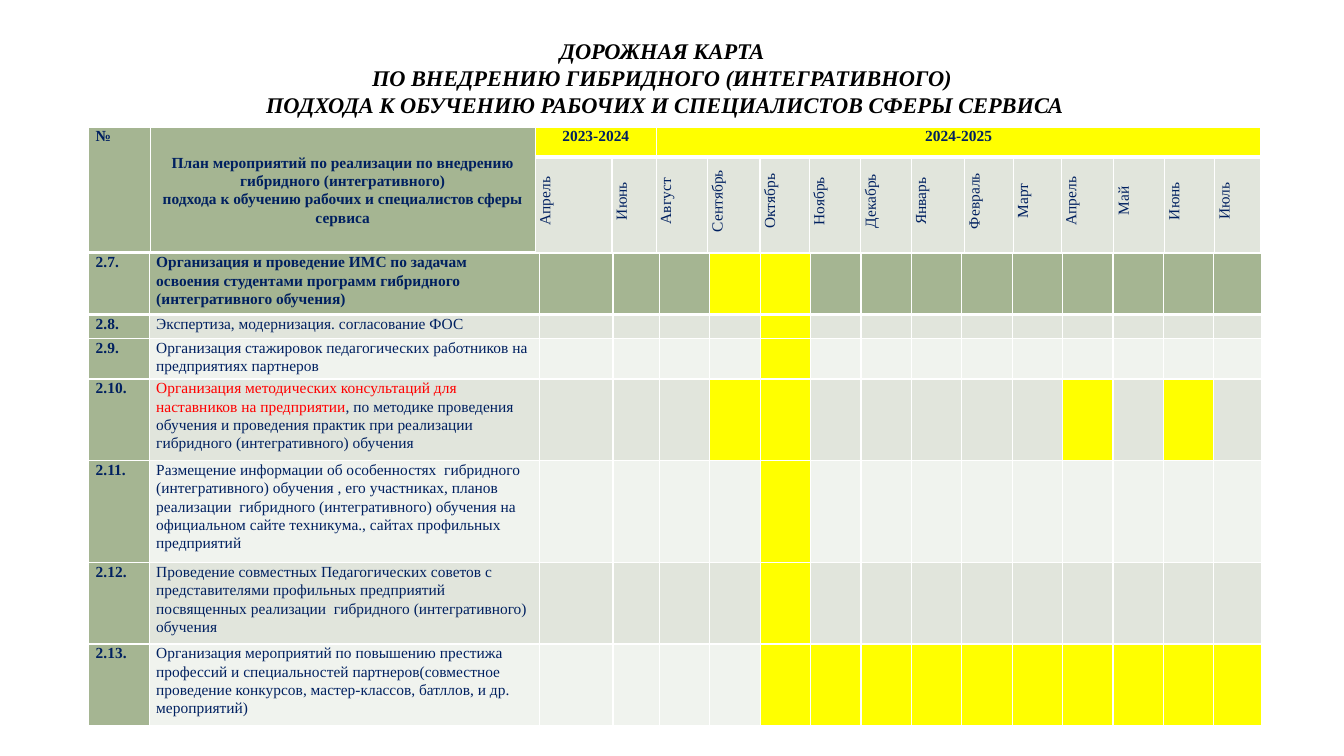
from lxml.etree import SubElement as Sub
from pptx import Presentation
from pptx.dml.color import RGBColor as Rgb
from pptx.enum.text import MSO_ANCHOR as Anchor, PP_ALIGN as Align
from pptx.oxml.ns import qn
from pptx.util import Inches, Pt

HUES = {"ink": "002060", "black": "000000", "red": "FF0000", "white": "FFFFFF",
        "green": "A5B592", "mid": "E1E5DC", "pale": "F0F3EE", "mark": "FFFF00"}

TITLE = ("ДОРОЖНАЯ КАРТА \n"
         "ПО ВНЕДРЕНИЮ ГИБРИДНОГО (ИНТЕГРАТИВНОГО) \n"
         "ПОДХОДА К ОБУЧЕНИЮ РАБОЧИХ И СПЕЦИАЛИСТОВ СФЕРЫ СЕРВИСА")
PLAN = ("План мероприятий по реализации по внедрению гибридного (интегративного)\n"
        "подхода к обучению рабочих и специалистов сферы сервиса")
MONTHS = ("Апрель Июнь Август Сентябрь Октябрь Ноябрь Декабрь Январь Февраль "
          "Март Апрель Май Июнь Июль").split()
LEAD = "Организация методических консультаций для наставников на предприятии"

TASKS = [
    (0.61, "Организация и проведение ИМС по задачам освоения студентами программ "
     "гибридного (интегративного обучения)", [3, 4]),
    (0.24, "Экспертиза, модернизация. согласование ФОС", [4]),
    (0.4, "Организация стажировок педагогических работников на предприятиях партнеров",
     [4]),
    (0.81, LEAD + ", по методике проведения обучения и проведения практик при "
     "реализации гибридного (интегративного) обучения", [3, 4, 10, 12]),
    (1.01, "Размещение информации об особенностях  гибридного (интегративного) "
     "обучения , его участниках, планов реализации  гибридного (интегративного) "
     "обучения на официальном сайте техникума., сайтах профильных предприятий", [4]),
    (0.81, "Проведение совместных Педагогических советов с представителями "
     "профильных предприятий посвященных реализации  гибридного (интегративного) "
     "обучения", [4]),
    (0.81, "Организация мероприятий по повышению престижа профессий и "
     "специальностей партнеров(совместное проведение конкурсов, мастер-классов, "
     "батллов, и др. мероприятий)", range(4, 14)),
]


def put(frame, text, size=11, hue="ink", bold=False, italic=False,
        align=Align.LEFT, space=1.07, lead=""):
    """Write lines of text into a frame, with an optional red lead."""
    for i, line in enumerate(text.split("\n")):
        para = frame.add_paragraph() if i else frame.paragraphs[0]
        para.alignment = align
        para.line_spacing = space
        parts = [(line, hue)]
        if lead and line.startswith(lead):
            parts = [(lead, "red"), (line[len(lead):], hue)]
        for part, tone in parts:
            run = para.add_run()
            run.text = part
            font = run.font
            font.name, font.size = "Times New Roman", Pt(size)
            font.bold, font.italic = bold, italic
            font.color.rgb = Rgb.from_string(HUES[tone])


def paint(cell, hue, base=1):
    """Give a cell its margins, white borders and fill."""
    cell.margin_left = cell.margin_right = Inches(0.07)
    cell.margin_top = cell.margin_bottom = 0
    props = cell._tc.get_or_add_tcPr()
    for side in "LRTB":
        line = Sub(props, qn("a:ln" + side), w=str(Pt(base if side == "B" else 1)))
        Sub(Sub(line, qn("a:solidFill")), qn("a:srgbClr"), val=HUES["white"])
    cell.fill.solid()
    cell.fill.fore_color.rgb = Rgb.from_string(HUES[hue])


def make_grid(slide, box, cols, rows):
    """Add a bare table with the given column widths and row heights."""
    frame = slide.shapes.add_table(len(rows), len(cols), *map(Inches, box))
    grid = frame.table
    for col, width in zip(grid.columns, cols):
        col.width = Inches(width)
    for row, height in zip(grid.rows, rows):
        row.height = Inches(height)
    return grid


def add_title(slide, box):
    """Place the three-line title."""
    title = slide.shapes.title
    title.left, title.top, title.width, title.height = map(Inches, box)
    title.text_frame.vertical_anchor = Anchor.TOP
    put(title.text_frame, TITLE, size=16, hue="black", bold=True, italic=True,
        align=Align.CENTER, space=1.0)


def add_head(slide, box):
    """Place the header with school years and months."""
    cols = [0.61, 3.82, 0.76, 0.44, 0.51, 0.52, 0.49, 0.51, 0.5, 0.53,
            0.48, 0.48, 0.52, 0.5, 0.5, 0.46]
    grid = make_grid(slide, box, cols, [0.3, 0.95])
    for c in range(len(cols)):
        paint(grid.cell(0, c), "green" if c < 2 else "mark", 3)
        paint(grid.cell(1, c), "green" if c < 2 else "mid", 3 if c < 2 else 1)
    heads = [(0, 1, 0, "№", Align.LEFT), (1, 1, 1, PLAN, Align.CENTER),
             (2, 0, 3, "2023-2024", Align.CENTER),
             (4, 0, 15, "2024-2025", Align.CENTER)]
    for left, low, right, text, align in heads:
        cell = grid.cell(0, left)
        cell.merge(grid.cell(low, right))
        put(cell.text_frame, text, bold=True, align=align)
    grid.cell(0, 1).vertical_anchor = Anchor.MIDDLE
    for c, month in enumerate(MONTHS, 2):
        cell = grid.cell(1, c)
        cell._tc.get_or_add_tcPr().set("vert", "vert270")
        put(cell.text_frame, month, align=Align.CENTER)
        cell.text_frame.paragraphs[0]._p.get_or_add_pPr().set("marL", str(Inches(0.08)))


def add_tasks(slide, box):
    """Place the numbered tasks with their marked months."""
    cols = [0.6, 3.87, 0.73, 0.46] + [0.5] * 11 + [0.47]
    grid = make_grid(slide, box, cols, [task[0] for task in TASKS])
    for r, (_, text, marks) in enumerate(TASKS):
        tone = "green" if r == 0 else "mid" if r % 2 else "pale"
        for c in range(len(cols)):
            cell = grid.cell(r, c)
            hue = "green" if c == 0 else "mark" if c - 2 in marks else tone
            paint(cell, hue, 1 if r else 3)
            if c > 1:
                para = cell.text_frame.paragraphs[0]
                Sub(para._p, qn("a:endParaRPr"), sz="1100")
        put(grid.cell(r, 0).text_frame, f"2.{r + 7}.", bold=True)
        put(grid.cell(r, 1).text_frame, text, bold=r == 0, lead=LEAD)


def main():
    """Build the road map slide."""
    deck = Presentation()
    deck.slide_width, deck.slide_height = Inches(13.33), Inches(7.5)
    slide = deck.slides.add_slide(deck.slide_layouts[5])
    add_title(slide, (0.53, 0.32, 12.13, 0.91))
    add_head(slide, (0.88, 1.26, 11.63, 1.25))
    add_tasks(slide, (0.88, 2.51, 11.63, 4.69))
    deck.save("out.pptx")


if __name__ == "__main__":
    main()
